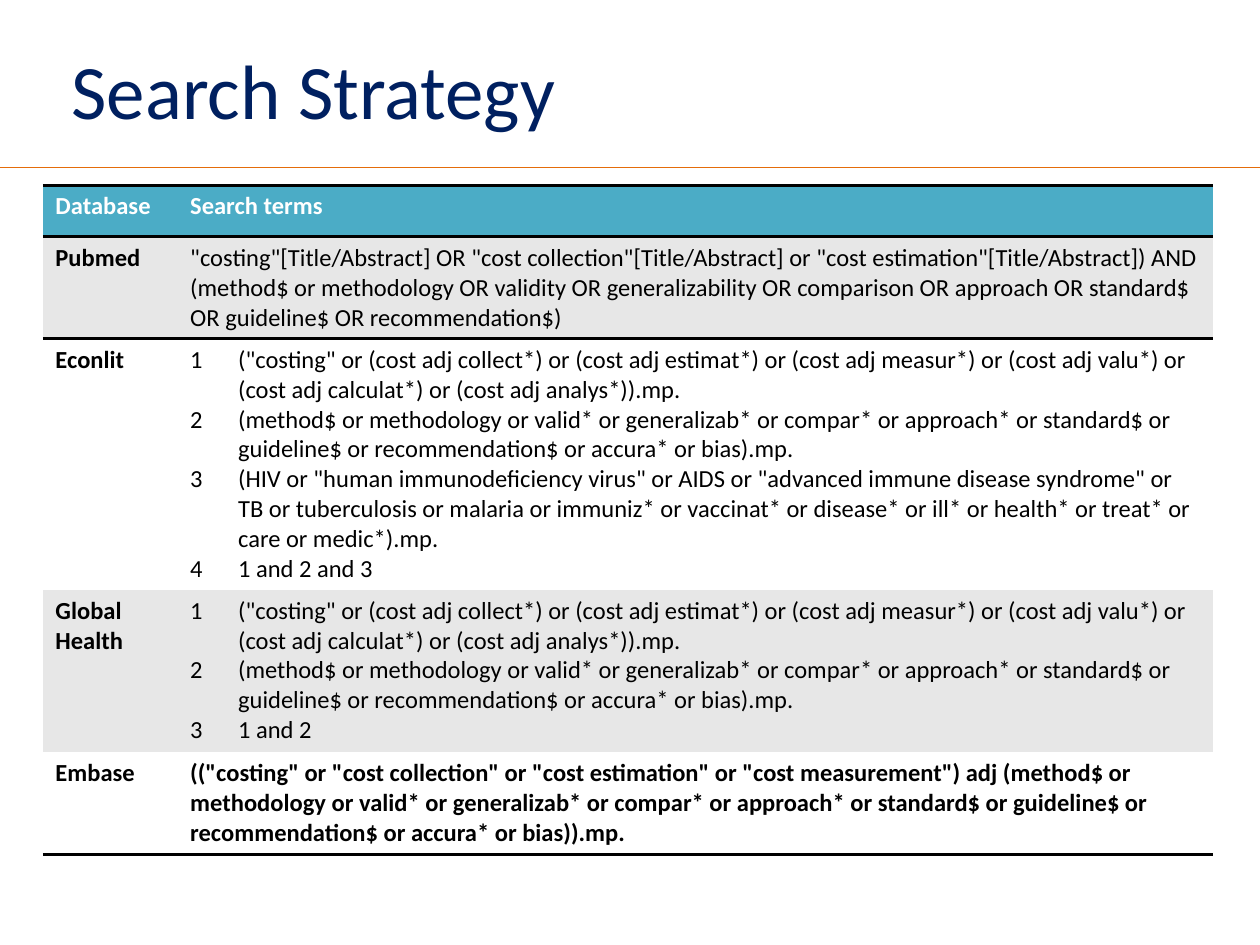
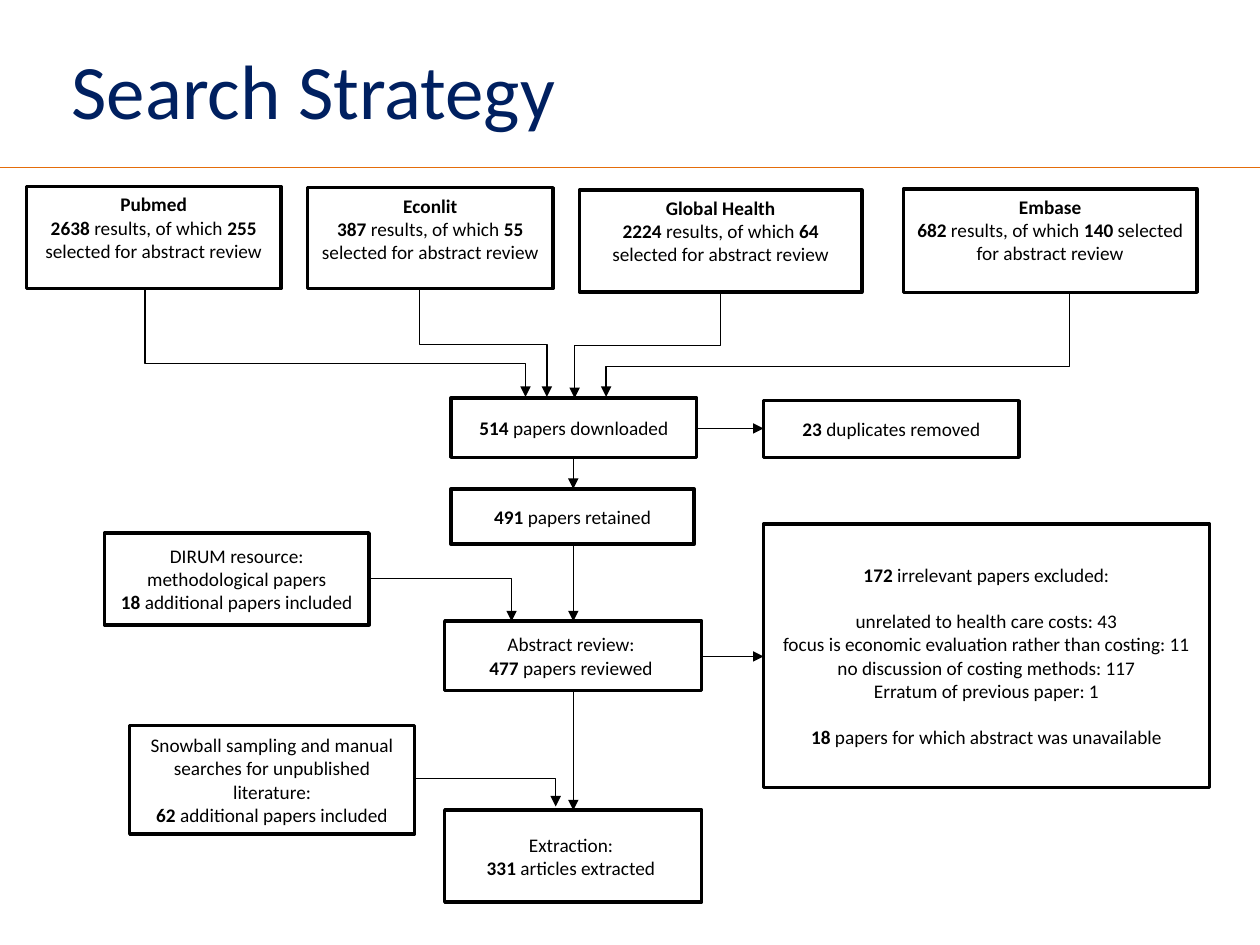
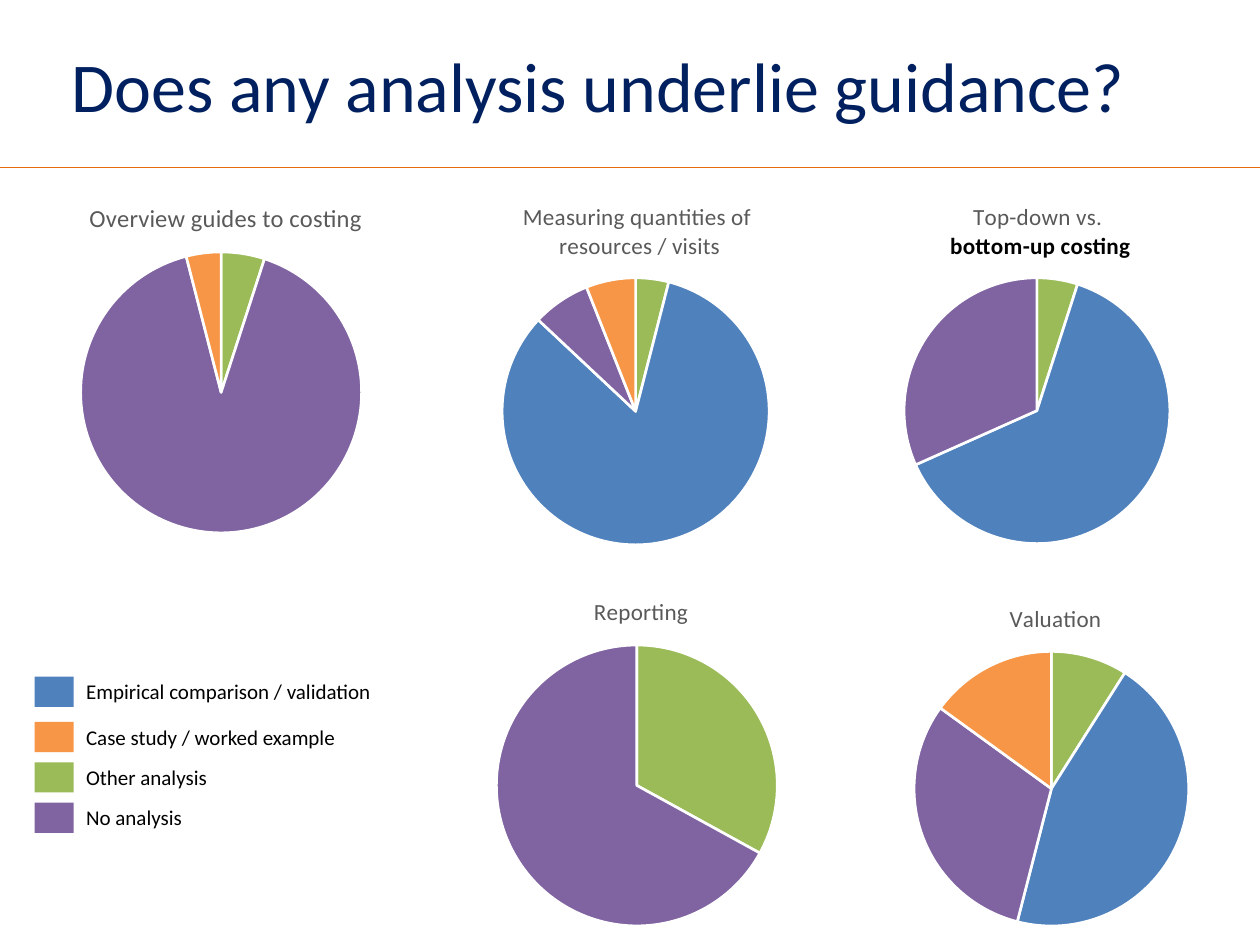
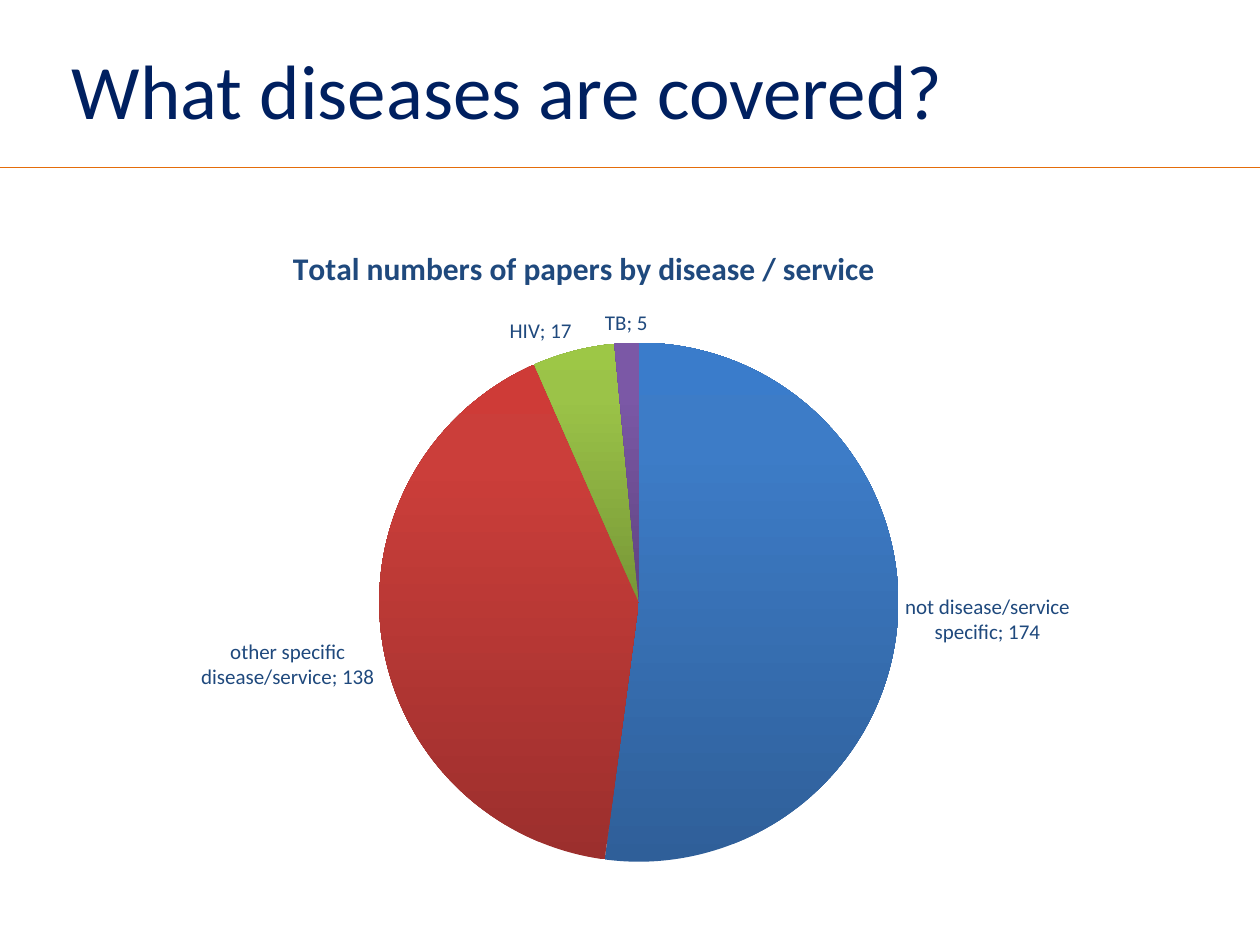
from copy import deepcopy

from lxml.etree import SubElement
from pptx import Presentation
from pptx.chart.data import CategoryChartData
from pptx.dml.color import RGBColor
from pptx.enum.chart import XL_CHART_TYPE, XL_LABEL_POSITION
from pptx.enum.shapes import MSO_CONNECTOR as CONN, MSO_SHAPE
from pptx.enum.text import MSO_ANCHOR as ANCHOR, PP_ALIGN as ALIGN
from pptx.oxml.ns import qn
from pptx.util import Inches, Pt

# Shared style
FONT = "Calibri"
NAVY, ORANGE, BLACK, WHITE = "002060", "E46C0A", "000000", "FFFFFF"
GREY, BAND, TEAL, INK = "595959", "E7E7E7", "4BACC6", "1F497D"
EMPIRICAL, CASE, OTHER, NONE = "4F81BD", "F79646", "9BBB59", "8064A2"
NO_STYLE = "{2D5ABB26-0587-4C30-8999-92F81FD0307C}"


def rgb(hex_color):
    return RGBColor.from_string(hex_color)


def put(obj, **values):
    for name, value in values.items():
        setattr(obj, name, value)


def fill(target, color):
    target.fill.solid()
    target.fill.fore_color.rgb = rgb(color)


def stroke(line, color, width):
    line.color.rgb = rgb(color)
    line.width = Pt(width)


def set_layout(parent, index, **shares):
    """Fix a chart part at shares of the chart's size."""
    for old in parent.findall(qn("c:layout")):
        parent.remove(old)
    layout = SubElement(parent, qn("c:layout"))
    parent.insert(index, layout)
    manual = SubElement(layout, qn("c:manualLayout"))
    if "w" in shares:
        SubElement(manual, qn("c:layoutTarget"), val="inner")
    for mode in ("xMode", "yMode"):
        SubElement(manual, qn(f"c:{mode}"), val="edge")
    for name, value in shares.items():
        SubElement(manual, qn(f"c:{name}"), val=f"{value:.4f}")


class Deck:
    """Slides on a grid of 100 columns by 75 rows."""

    def __init__(self):
        self.prs = Presentation()
        put(self.prs, slide_width=Inches(10), slide_height=Inches(7.5))
        self.unit = self.prs.slide_width / 100
        self.s = None

    def grid(self, *cells):
        return [round(c * self.unit) for c in cells]

    def slide(self, title, size=44):
        self.s = self.prs.slides.add_slide(self.prs.slide_layouts[6])
        self.line(0, 13.3, 100, 13.3, ORANGE, 1)
        self.text((4.7, 2.9, 90.3, 10.4), title, size=size, color=NAVY)

    def add_paras(self, tf, paras, size=11, color=BLACK, bold=False,
                  align=ALIGN.LEFT, numbered=False):
        """Fill a text frame; bars in the wording switch bold on and off."""
        for i, wording in enumerate(paras):
            p = tf.add_paragraph() if i else tf.paragraphs[0]
            p.alignment = align
            if numbered:
                pPr = p._p.get_or_add_pPr()
                pPr.set("marL", str(Inches(0.38)))
                pPr.set("indent", str(-Inches(0.38)))
                SubElement(pPr, qn("a:buFont"), typeface="+mj-lt")
                SubElement(pPr, qn("a:buAutoNum"), type="arabicPlain")
            for j, part in enumerate(wording.split("|")):
                if part:
                    r = p.add_run()
                    r.text = part
                    put(r.font, name=FONT, size=Pt(size), bold=bold != (j % 2 == 1))
                    r.font.color.rgb = rgb(color)

    def text(self, at, wording, wrap=True, **style):
        tf = self.s.shapes.add_textbox(*self.grid(*at)).text_frame
        tf.word_wrap = wrap
        self.add_paras(tf, [wording], **style)

    def rect(self, at, color):
        sp = self.s.shapes.add_shape(MSO_SHAPE.RECTANGLE, *self.grid(*at))
        sp.shadow.inherit = False
        fill(sp, color)
        sp.line.fill.background()
        return sp

    def box(self, at, *paras, anchor=ANCHOR.MIDDLE):
        sp = self.rect(at, WHITE)
        stroke(sp.line, BLACK, 2)
        tf = sp.text_frame
        put(tf, word_wrap=True, vertical_anchor=anchor)
        self.add_paras(tf, paras, align=ALIGN.CENTER)
        return tf

    # Lines and arrows
    def line(self, x1, y1, x2, y2, color=BLACK, width=0.75, kind=CONN.STRAIGHT):
        sp = self.s.shapes.add_connector(kind, *self.grid(x1, y1, x2, y2))
        stroke(sp.line, color, width)
        SubElement(sp._element.spPr, qn("a:effectLst"))
        return sp

    def arrow(self, *ends, kind=CONN.STRAIGHT):
        sp = self.line(*ends, kind=kind)
        SubElement(sp.line._get_or_add_ln(), qn("a:tailEnd"), type="triangle")
        return sp

    def corner_arrow(self, *ends):
        """Go across, then down."""
        sp = self.arrow(*ends, kind=CONN.ELBOW)
        sp._element.spPr.find(qn("a:prstGeom")).set("prst", "bentConnector2")

    def drop_arrow(self, x1, y1, x2, y2, bend):
        """Go down to the share `bend` of the height, across, and down."""
        sp = self.arrow(x1, y1, x2, y2, kind=CONN.ELBOW)
        w, h = y2 - y1, abs(x2 - x1)
        left, top, width, height = self.grid(
            (x1 + x2 - w) / 2, (y1 + y2 - h) / 2, w, h)
        put(sp, left=left, top=top, width=width, height=height)
        xfrm = sp._element.spPr.find(qn("a:xfrm"))
        xfrm.set("rot", str((270 if x2 > x1 else 90) * 60000))
        xfrm.set("flipH", "1" if x2 > x1 else "0")
        guides = sp._element.spPr.find(qn("a:prstGeom")).find(qn("a:avLst"))
        SubElement(guides, qn("a:gd"), name="adj1", fmla=f"val {round(bend * 100000)}")

    # Table
    def table(self, left, top, widths, heights, rows):
        frame = self.s.shapes.add_table(
            len(rows), len(widths), *self.grid(left, top, sum(widths), sum(heights)))
        tbl = frame.table
        put(tbl, first_row=False, horz_banding=False)
        frame._element.find(".//" + qn("a:tableStyleId")).text = NO_STYLE
        for col, width in zip(tbl.columns, self.grid(*widths)):
            col.width = width
        for row, height in zip(tbl.rows, self.grid(*heights)):
            row.height = height
        last = len(rows) - 1
        for i, row in enumerate(rows):
            for j, paras in enumerate(row):
                cell = tbl.cell(i, j)
                sides = {0: ("lnT", "lnB"), 1: ("lnT",), last: ("lnB",)}.get(i, ())
                for side in sides:
                    ln = SubElement(cell._tc.get_or_add_tcPr(), qn(f"a:{side}"),
                                    w=str(Pt(2)))
                    solid = SubElement(ln, qn("a:solidFill"))
                    SubElement(solid, qn("a:srgbClr"), val=BLACK)
                fill(cell, TEAL if i == 0 else BAND if i % 2 else WHITE)
                self.add_paras(cell.text_frame, paras, size=14,
                               color=BLACK if i else WHITE,
                               bold=j == 0 or i in (0, last), numbered=len(paras) > 1)

    # Pie chart
    def pie(self, at, center, diameter, slices, title, title_at, colors=(), **style):
        """Draw slices {category: value}; the pie and its title sit on the grid."""
        data = CategoryChartData()
        data.categories = list(slices)
        data.add_series("Papers", list(slices.values()))
        chart = self.s.shapes.add_chart(XL_CHART_TYPE.PIE, *self.grid(*at), data).chart
        chart.has_legend = False
        put(chart.font, name=FONT, size=Pt(10))
        chart.font.color.rgb = rgb(BLACK)
        area = SubElement(chart._chartSpace, qn("c:spPr"))
        chart._chartSpace.chart.addnext(area)
        SubElement(area, qn("a:noFill"))
        SubElement(SubElement(area, qn("a:ln")), qn("a:noFill"))

        left, top, width, height = at
        chart.has_title = True
        head = chart.chart_title
        self.add_paras(head.text_frame, title, align=ALIGN.CENTER, **style)
        set_layout(head._element, 1, x=(title_at[0] - left) / width,
                   y=(title_at[1] - top) / height)
        set_layout(chart._chartSpace.chart.plotArea, 0,
                   x=(center[0] - diameter / 2 - left) / width,
                   y=(center[1] - diameter / 2 - top) / height,
                   w=diameter / width, h=diameter / height)
        plot = chart.plots[0]
        plot.vary_by_categories = True
        series = plot.series[0]
        for i, color in enumerate(colors):
            point = series.points[i].format
            fill(point, color)
            stroke(point.line, WHITE, 1.5)
        return plot

    def shade(self, series, index, shades):
        """Fill a slice from bottom to top with three shades."""
        point = series.points[index].format
        point.line.fill.background()
        point.fill.gradient()
        point.fill.gradient_angle = 90
        stops = list(series._element.iter(qn("a:gsLst")))[-1]
        stops.append(deepcopy(stops[-1]))
        for stop, position, color in zip(point.fill.gradient_stops, (0, 0.8, 1), shades):
            stop.position = position
            stop.color.rgb = rgb(color)


def search_terms(deck):
    deck.slide("Search Strategy")
    costing = ('("costing" or (cost adj collect*) or (cost adj estimat*) or (cost adj '
               'measur*) or (cost adj valu*) or (cost adj calculat*) or (cost adj '
               'analys*)).mp.')
    quality = ("method$ or methodology or valid* or generalizab* or compar* or approach* "
               "or standard$ or guideline$ or recommendation$ or accura* or bias")
    method = f"({quality}).mp."
    pubmed = ('"costing"[Title/Abstract] OR "cost collection"[Title/Abstract] or "cost '
              'estimation"[Title/Abstract]) AND (method$ or methodology OR validity OR '
              'generalizability OR comparison OR approach OR standard$ OR guideline$ OR '
              'recommendation$)')
    disease = ('(HIV or "human immunodeficiency virus" or AIDS or "advanced immune disease '
               'syndrome" or TB or tuberculosis or malaria or immuniz* or vaccinat* or '
               'disease* or ill* or health* or treat* or care or medic*).mp.')
    embase = ('(("costing" or "cost collection" or "cost estimation" or "cost '
              f'measurement") adj ({quality})).mp.')
    deck.table(3.4, 14.7, (10.7, 82.2), (4.1, 8.1, 19.9, 12.9, 8.1), [
        (["Database"], ["Search terms"]),
        (["Pubmed"], [pubmed]),
        (["Econlit"], [costing, method, disease, "1 and 2 and 3"]),
        (["Global Health"], [costing, method, "1 and 2"]),
        (["Embase"], [embase]),
    ])


def search_flow(deck):
    deck.slide("Search Strategy")
    # Databases, each with its arrow to the downloads
    sources = [
        ("Pubmed", 2638, 255, (2.1, 14.8, 20.2, 8.1), (11.5, 22.9, 41.7, 31.5, 0.69)),
        ("Econlit", 387, 55, (24.4, 14.9, 19.5, 8), (33.3, 22.9, 43.4, 31.5, 0.52)),
        ("Global Health", 2224, 64, (46, 15.1, 22.4, 8.1), (57.2, 23.2, 45.6, 31.6, 0.5)),
        ("Embase", 682, 140, (71.7, 15, 23.3, 8.2), (84.9, 23.2, 48.1, 31.5, 0.71)),
    ]
    for name, found, selected, at, route in sources:
        deck.box(at, f"|{name}|",
                 f"|{found}| results, of which |{selected}| selected for abstract review",
                 anchor=ANCHOR.TOP)
        deck.drop_arrow(*route)

    # Main stages
    deck.box((35.8, 31.6, 19.5, 4.7), "|514| papers downloaded")
    deck.box((35.8, 38.8, 19.3, 4.4), "|491| papers retained")
    deck.box((35.3, 49.3, 20.4, 5.5), "Abstract review: ", "|477| papers reviewed ")
    deck.box((35.3, 64.3, 20.4, 7.3), "Extraction: ", "|331| articles extracted ")
    for start, end in ((36.4, 38.8), (43.1, 49.3), (54.8, 64.3)):
        deck.arrow(45.5, start, 45.5, end)

    # Papers added
    deck.box((8.3, 42.3, 21, 7.3), "DIRUM resource: methodological papers",
             "|18 |additional papers included")
    deck.corner_arrow(29.2, 45.9, 40.6, 49.3)
    deck.box((10.3, 57.6, 22.6, 8.6),
             "Snowball sampling and manual searches for unpublished literature:",
             "|62| additional papers included")
    deck.corner_arrow(32.9, 61.8, 44.1, 64)

    # Papers removed
    deck.box((60.6, 31.8, 20.3, 4.5), "|23| duplicates removed")
    deck.arrow(55.3, 34, 60.6, 34)
    tf = deck.box((60.6, 41.6, 35.4, 20.9), "|172| irrelevant papers excluded:",
                  "unrelated to health care costs: 43",
                  "focus is economic evaluation rather than costing: 11",
                  "no discussion of costing methods: 117",
                  "Erratum of previous paper: 1",
                  "|18| papers for which abstract was unavailable")
    for i in (1, 5):
        tf.paragraphs[i].space_before = Pt(13.4)
    deck.arrow(55.7, 52.1, 60.6, 52.1)


def analysis_pies(deck):
    deck.slide("Does any analysis underlie guidance?", 40)
    # Key
    key = [(53.7, EMPIRICAL, "Empirical comparison / validation"),
           (57.3, CASE, "Case study / worked example"),
           (60.5, OTHER, "Other analysis"),
           (63.7, NONE, "No analysis")]
    for top, color, label in key:
        deck.rect((2.75, top, 3.1, 2.4), color)
        deck.text((5.85, top - 0.3, 25, 3), label, wrap=False, size=12)

    # One pie for each kind of guidance
    pies = [
        ((0, 13.9, 35.5, 29.9), (17.55, 31.15), 22.3, ["Overview guides to costing"],
         (6.75, 15.6), 14, {OTHER: 5, NONE: 91, CASE: 4}),
        ((33.5, 13.9, 33.9, 30.8), (50.45, 32.65), 21.2,
         ["Measuring quantities of ", "resources / visits"],
         (41.2, 15.6), 13.2, {OTHER: 4, EMPIRICAL: 83, NONE: 7, CASE: 6}),
        ((65, 13.9, 34.5, 30.7), (82.3, 32.6), 21.1,
         ["Top-down vs. ", "|bottom-up costing|"],
         (75.1, 15.6), 13.2, {OTHER: 5, EMPIRICAL: 64, NONE: 32}),
        ((69.1, 45.8, 28.7, 29.2), (83.45, 62.6), 21.8, ["Valuation"],
         (79.8, 47.5), 13.2, {OTHER: 9, EMPIRICAL: 45, NONE: 31, CASE: 15}),
        ((33.5, 45.2, 33.9, 29.8), (50.55, 62.35), 22.3, ["Reporting"],
         (46.8, 46.9), 13.2, {OTHER: 33, NONE: 67}),
    ]
    for at, center, diameter, title, title_at, points, shares in pies:
        slices = {str(i): v for i, v in enumerate(shares.values(), 1)}
        plot = deck.pie(at, center, diameter, slices, title, title_at, list(shares),
                        size=points, color=GREY)
        title_end = plot.chart.chart_title.text_frame.paragraphs[-1].runs[-1].font
        if title_end.bold:
            title_end.color.rgb = rgb(BLACK)


def disease_pie(deck):
    deck.slide("What diseases are covered?")
    papers = {"not disease/service specific": 174, "other specific disease/service": 138,
              "HIV": 17, "TB": 5}
    plot = deck.pie((4.7, 16.2, 90, 53.5), (50.7, 47.8), 41.2, papers,
                    ["Total numbers of papers by disease / service"], (22.8, 19.1),
                    size=18, color=INK, bold=True)
    shades = [("2F5F99", "3D7CC7", "3A7CCB"), ("9C2F2D", "CB3E3A", "CE3B37"),
              ("779737", "9BC348", "9DC746"), ("5F4480", "7B58A6", "7C57A8")]
    for i, trio in enumerate(shades):
        deck.shade(plot.series[0], i, trio)

    # Labels
    plot.has_data_labels = True
    labels = plot.data_labels
    put(labels, show_value=True, show_category_name=True, show_percentage=False,
        position=XL_LABEL_POSITION.OUTSIDE_END)
    put(labels.font, name=FONT, size=Pt(12))
    labels.font.color.rgb = rgb(INK)
    separator = SubElement(labels._element, qn("c:separator"))
    separator.text = "; "
    labels._element.find(qn("c:showBubbleSize")).addnext(separator)


def main():
    deck = Deck()
    for build in (search_terms, search_flow, analysis_pies, disease_pie):
        build(deck)
    deck.prs.save("out.pptx")


if __name__ == "__main__":
    main()
